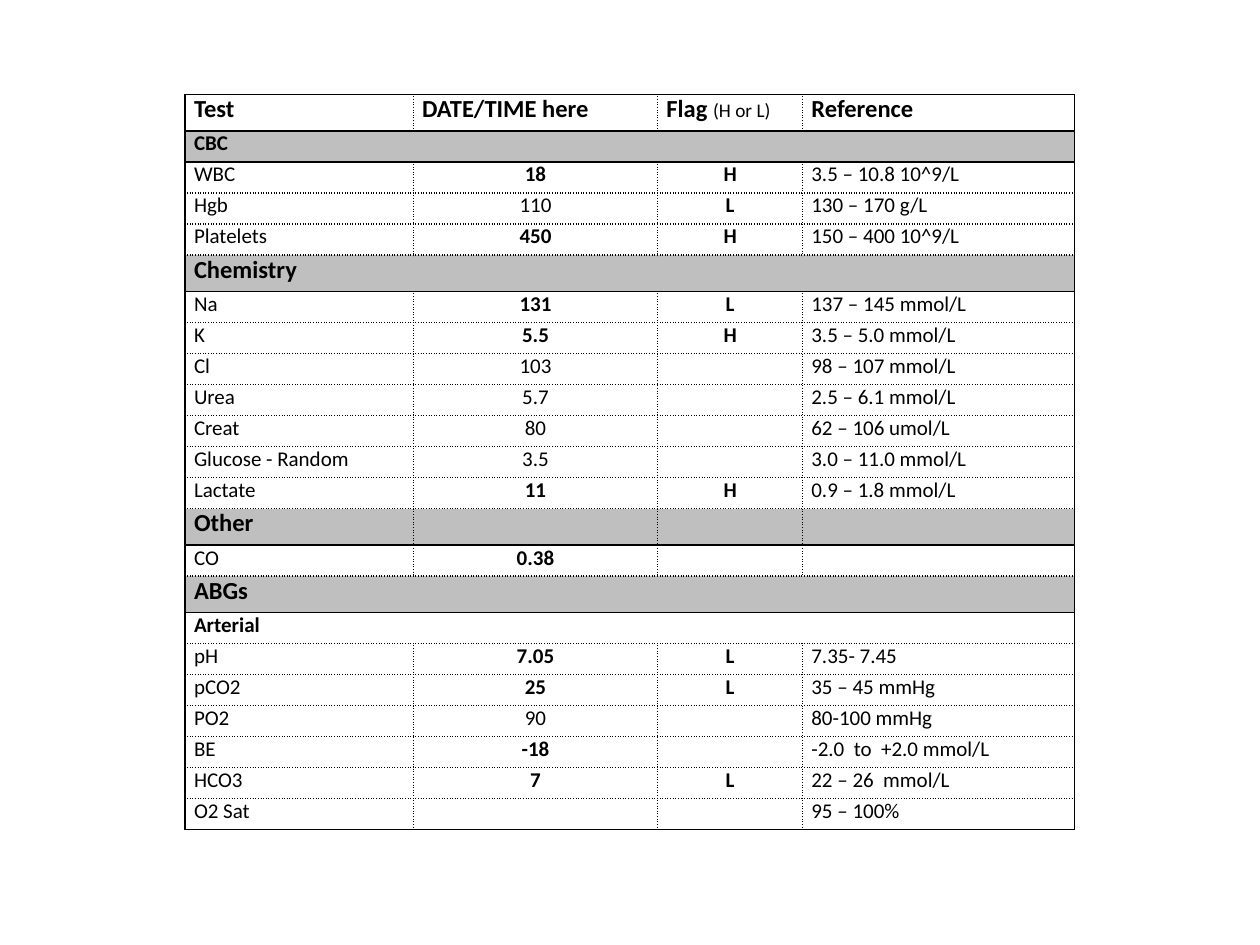
import pptx
import pptx.dml.color
import pptx.enum.text
import pptx.oxml.ns
import pptx.util
from lxml import etree

Inches = pptx.util.Inches
qn = pptx.oxml.ns.qn


def color(hex_value):
    return pptx.dml.color.RGBColor.from_string(hex_value)


def add_border(cell, side, solid):
    line = etree.SubElement(cell._tc.get_or_add_tcPr(), qn("a:ln" + side), w=str(pptx.util.Pt(1)))
    fill = etree.SubElement(line, qn("a:solidFill"))
    etree.SubElement(fill, qn("a:srgbClr"), val="000000")
    etree.SubElement(line, qn("a:prstDash"), val="solid" if solid else "dot")


# Lab results: test, value, flag, reference; one-item rows are headings
rows = [
    ("Test", "DATE/TIME here", "Flag ", "Reference"),
    ("CBC",),
    ("WBC", "18", "H", "3.5 – 10.8 10^9/L"),
    ("Hgb", "110", "L", "130 – 170 g/L"),
    ("Platelets", "450", "H", "150 – 400 10^9/L"),
    ("Chemistry",),
    ("Na", "131", "L", "137 – 145 mmol/L"),
    ("K", "5.5", "H", "3.5 – 5.0 mmol/L"),
    ("Cl", "103", "", "98 – 107 mmol/L"),
    ("Urea", "5.7", "", "2.5 – 6.1 mmol/L"),
    ("Creat", "80", "", "62 – 106 umol/L"),
    ("Glucose - Random", "3.5", "", "3.0 – 11.0 mmol/L"),
    ("Lactate", "11", "H", "0.9 – 1.8 mmol/L"),
    ("Other", "", "", ""),
    ("CO", "0.38", "", ""),
    ("ABGs",),
    ("Arterial",),
    ("pH", "7.05", "L", "7.35- 7.45"),
    ("pCO2", "25", "L", "35 – 45 mmHg"),
    ("PO2", "90", "", "80-100 mmHg"),
    ("BE", "-18", "", "-2.0  to  +2.0 mmol/L"),
    ("HCO3", "7", "L", "22 – 26  mmol/L"),
    ("O2 Sat", "", "", "95 – 100%"),
]
gray_rows = {"CBC", "Chemistry", "Other", "ABGs"}
large_rows = {"Test", "Chemistry", "Other", "ABGs"}
bold_rows = gray_rows | {"Test", "Arterial"}
bold_values = {"WBC", "Platelets", "Na", "K", "Lactate", "CO", "pH", "pCO2", "BE", "HCO3"}
ruled_rows = gray_rows | {"Test", rows[-1][0]}  # solid line below

deck = pptx.Presentation()
deck.slide_width, deck.slide_height = Inches(10), Inches(7.5)
page = deck.slides.add_slide(deck.slide_layouts[6])

# Table grid
table_height, large_height = 5.84, 0.29
small_height = (table_height - large_height * len(large_rows)) / (len(rows) - len(large_rows))
table = page.shapes.add_table(len(rows), 4, Inches(1.47), Inches(0.75),
                              Inches(7.07), Inches(table_height)).table
table.first_row = table.horz_banding = False
for column, width in zip(table.columns, (1.81, 1.94, 1.15, 2.16)):
    column.width = Inches(width)

# Cells
solid_above = True
for r, row in enumerate(rows):
    name = row[0]
    merged = len(row) == 1
    solid_below = name in ruled_rows
    size = 14 if name in large_rows else 12
    table.rows[r].height = Inches(large_height if name in large_rows else small_height)
    if merged:
        table.cell(r, 0).merge(table.cell(r, 3))

    for c in range(4):
        cell = table.cell(r, c)
        cell.margin_left = cell.margin_right = Inches(0.07)
        cell.margin_top = cell.margin_bottom = 0
        add_border(cell, "L", c == 0 or merged)
        add_border(cell, "R", c == 3 or merged)
        add_border(cell, "T", solid_above)
        add_border(cell, "B", solid_below)
        if name in gray_rows or r == 0:
            cell.fill.solid()
            cell.fill.fore_color.rgb = color("FFFFFF" if r == 0 else "BFBFBF")
        else:
            cell.fill.background()

        para = cell.text_frame.paragraphs[0]
        para.text = row[c] if c < len(row) else ""
        if r > 0 and c in (1, 2):
            para.alignment = pptx.enum.text.PP_ALIGN.CENTER
        for span in para.runs:
            span.font.name = "Calibri"
            span.font.size = pptx.util.Pt(size)
            span.font.color.rgb = color("000000")
            span.font.bold = name in bold_rows or c == 2 or (c == 1 and name in bold_values)
        if not para.runs:  # keeps empty cells from stretching the row
            etree.SubElement(para._p, qn("a:endParaRPr"), sz=str(size * 100))
    solid_above = solid_below

# Small note in the flag heading
note = table.cell(0, 2).text_frame.paragraphs[0].add_run()
note.text = "(H or L)"
note.font.name = "Calibri"
note.font.size = pptx.util.Pt(11)
note.font.bold = False
note.font.color.rgb = color("000000")

deck.save("out.pptx")
